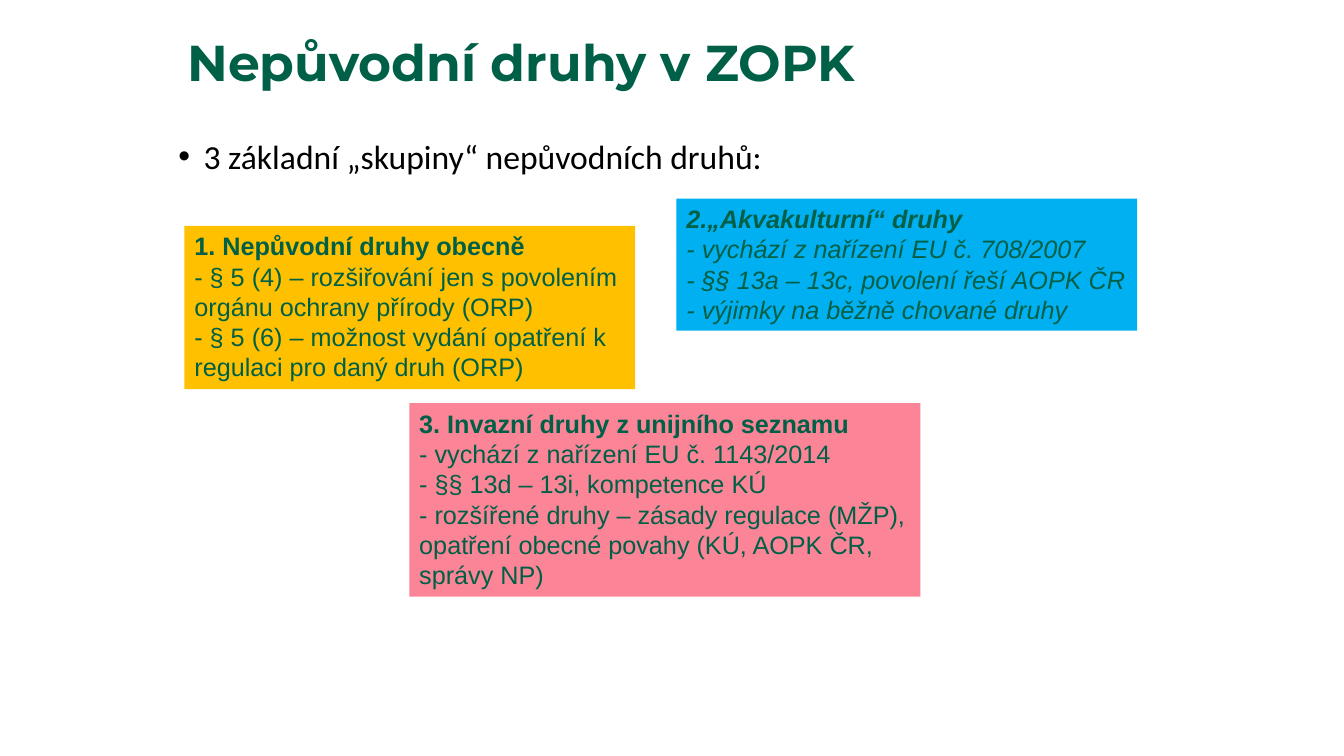
from lxml import etree
from pptx import Presentation
from pptx.dml.color import RGBColor
from pptx.enum.shapes import MSO_SHAPE
from pptx.enum.text import MSO_ANCHOR, PP_ALIGN
from pptx.oxml.ns import qn
from pptx.util import Inches, Pt

# Content
COLORS = {"green": "006047", "black": "000000", "amber": "FFC000",
          "blue": "00B0F0", "pink": "FB8596"}
FORMATS = {
    "title": {"name": "Montserrat", "size": Pt(36), "bold": True},
    "intro": {"name": "Calibri", "size": Pt(24), "bold": False},
    "group": {"name": "Arial", "size": Pt(18)},
}
TITLE = "Nepůvodní druhy v ZOPK"
INTRO = "3 základní „skupiny“ nepůvodních druhů:"
GROUPS = [
    {"box": (1.83, 2.24, 4.47, 1.62), "fill": "amber", "italic": False, "lines": [
        "1. Nepůvodní druhy obecně",
        "- § 5 (4) – rozšiřování jen s povolením",
        "orgánu ochrany přírody (ORP)",
        "- § 5 (6) – možnost vydání opatření k regulaci pro daný druh (ORP)"]},
    {"box": (6.71, 1.97, 4.57, 1.31), "fill": "blue", "italic": True, "lines": [
        "2.„Akvakulturní“ druhy",
        "- vychází z nařízení EU č. 708/2007",
        "- §§ 13a – 13c, povolení řeší AOPK ČR",
        "- výjimky na běžně chované druhy"]},
    {"box": (4.06, 4, 5.07, 1.92), "fill": "pink", "italic": False, "lines": [
        "3. Invazní druhy z unijního seznamu",
        "- vychází z nařízení EU č. 1143/2014",
        "- §§ 13d – 13i, kompetence KÚ",
        "- rozšířené druhy – zásady regulace (MŽP), opatření obecné povahy "
        "(KÚ, AOPK ČR, správy NP)"]},
]


def write(paragraph, text, color, **font_values):
    run = paragraph.add_run()
    run.text = text
    for name, value in font_values.items():
        setattr(run.font, name, value)
    run.font.color.rgb = RGBColor.from_string(COLORS[color])


def add_text_box(slide, box, anchor):
    frame = slide.shapes.add_textbox(*map(Inches, box)).text_frame
    frame.word_wrap = True
    frame.vertical_anchor = anchor
    paragraph = frame.paragraphs[0]
    paragraph.line_spacing = 0.9
    return paragraph


def add_bullet(paragraph, indent):
    properties = paragraph._p.get_or_add_pPr()
    properties.set("marL", str(Inches(indent)))
    properties.set("indent", str(-Inches(indent)))
    etree.SubElement(properties, qn("a:buFont")).set("typeface", "Arial")
    etree.SubElement(properties, qn("a:buChar")).set("char", "•")


def add_group(slide, group):
    shape = slide.shapes.add_shape(MSO_SHAPE.RECTANGLE, *map(Inches, group["box"]))
    shape.shadow.inherit = False
    shape.fill.solid()
    shape.fill.fore_color.rgb = RGBColor.from_string(COLORS[group["fill"]])
    shape.line.fill.background()
    frame = shape.text_frame
    frame.word_wrap = True
    frame.vertical_anchor = MSO_ANCHOR.TOP
    for index, line in enumerate(group["lines"]):
        paragraph = frame.add_paragraph() if index else frame.paragraphs[0]
        paragraph.alignment = PP_ALIGN.LEFT
        write(paragraph, line, "green", **FORMATS["group"],
              bold=index == 0, italic=group["italic"])


presentation = Presentation()
presentation.slide_width = Inches(13.33)
presentation.slide_height = Inches(7.5)
slide = presentation.slides.add_slide(presentation.slide_layouts[6])

# Title
title = add_text_box(slide, (1.76, 0.28, 8.62, 0.74), MSO_ANCHOR.MIDDLE)
write(title, TITLE, "green", **FORMATS["title"])

# Introductory bullet
intro = add_text_box(slide, (1.67, 1.34, 9.75, 4.76), MSO_ANCHOR.TOP)
add_bullet(intro, 0.25)
write(intro, INTRO, "black", **FORMATS["intro"])

# Three groups of species
for group in GROUPS:
    add_group(slide, group)

presentation.save("out.pptx")
